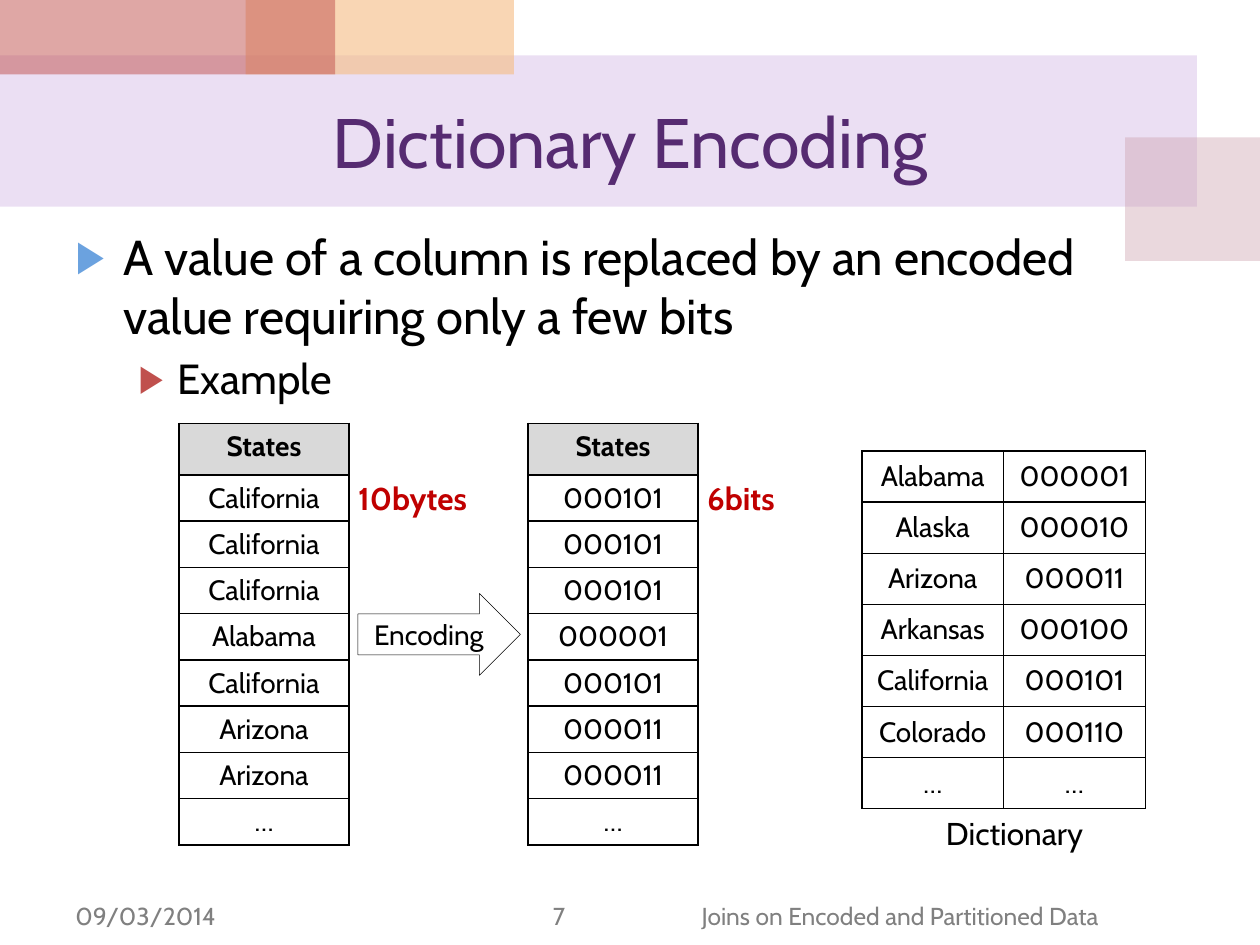
from lxml.etree import SubElement
from pptx import Presentation
from pptx.dml.color import RGBColor
from pptx.enum.shapes import MSO_SHAPE
from pptx.enum.text import MSO_ANCHOR, PP_ALIGN
from pptx.oxml.ns import qn
from pptx.util import Inches, Pt

SLIDE_WIDTH, SLIDE_HEIGHT = Inches(10), Inches(7.5)
COLUMN, ROW = SLIDE_WIDTH / 100, SLIDE_HEIGHT / 75
FONT = "Cabin"
BLACK = RGBColor(0x00, 0x00, 0x00)
GRAY = RGBColor(0x80, 0x80, 0x80)
HEADER_GRAY = RGBColor(0xD9, 0xD9, 0xD9)
PURPLE = RGBColor(0x56, 0x2B, 0x71)
LILAC = RGBColor(0xBF, 0x98, 0xD8)
ROSE = RGBColor(0xCC, 0x9E, 0xAC)
PEACH = RGBColor(0xF5, 0xBC, 0x83)
BRICK = RGBColor(0xC0, 0x50, 0x4D)
SKY = RGBColor(0x6B, 0xA2, 0xDF)
RED = RGBColor(0xC0, 0x00, 0x00)

BANDS = [
    ((0, 4.4, 95, 12), LILAC, 30),
    ((89.3, 10.9, 10.7, 9.8), ROSE, 40),
    ((19.5, 0, 21.3, 5.9), PEACH, 60),
    ((0, 0, 26.6, 5.9), BRICK, 50),
]
BULLETS = [
    ("A value of a column is replaced by an encoded value requiring only a few bits",
     28, 0, 0.38, 0.38, SKY),
    ("Example", 24, 1, 0.81, 0.31, BRICK),
]
CODES = {
    "Alabama": "000001", "Alaska": "000010", "Arizona": "000011",
    "Arkansas": "000100", "California": "000101", "Colorado": "000110", "…": "…",
}
STATES = ["California"] * 3 + ["Alabama", "California", "Arizona", "Arizona", "…"]


def grid(left, top, width, height):
    """Turn columns and rows of the slide grid into lengths."""
    return int(left * COLUMN), int(top * ROW), int(width * COLUMN), int(height * ROW)


def style(paragraph, size, color=BLACK, bold=False, align=None):
    """Format a paragraph and its runs."""
    paragraph.alignment = align
    for run in paragraph.runs:
        run.font.name = FONT
        run.font.size = Pt(size)
        run.font.bold = bold
        run.font.color.rgb = color


def add_label(slide, box, text, size, color=BLACK, bold=False):
    """Add a one-line text box and return its paragraph."""
    frame = slide.shapes.add_textbox(*grid(*box)).text_frame
    frame.word_wrap = True
    frame.text = text
    style(frame.paragraphs[0], size, color, bold)
    return frame.paragraphs[0]


def add_bands(slide):
    """Draw the translucent rectangles behind the title."""
    for box, color, opacity in BANDS:
        band = slide.shapes.add_shape(MSO_SHAPE.RECTANGLE, *grid(*box))
        band.shadow.inherit = False
        band.line.fill.background()
        band.fill.solid()
        band.fill.fore_color.rgb = color
        color_node = next(band.fill._xPr.iter(qn("a:srgbClr")))
        SubElement(color_node, qn("a:alpha"), val=str(opacity * 1000))


def add_footer(slide, box):
    """Place date, page number and talk title at tab stops."""
    paragraph = add_label(slide, box, "09/03/2014\t7\tJoins on Encoded and Partitioned Data", 14, GRAY)
    tabs = SubElement(paragraph._p.get_or_add_pPr(), qn("a:tabLst"))
    for position in (3.79, 4.97):
        SubElement(tabs, qn("a:tab"), pos=str(Inches(position)), algn="l")


def place_placeholder(slide, placeholder, box):
    """Move a placeholder to its box, in front of the bands."""
    placeholder.left, placeholder.top, placeholder.width, placeholder.height = grid(*box)
    slide.shapes._spTree.append(placeholder._element)
    return placeholder.text_frame


def fill_title(slide, box):
    """Write the slide title."""
    frame = place_placeholder(slide, slide.shapes.title, box)
    frame.text = "Dictionary Encoding"
    frame.vertical_anchor = MSO_ANCHOR.MIDDLE
    style(frame.paragraphs[0], 40, PURPLE, align=PP_ALIGN.CENTER)


def fill_body(slide, box):
    """Write the bulleted list."""
    frame = place_placeholder(slide, slide.placeholders[1], box)
    frame.text = "\n".join(bullet[0] for bullet in BULLETS)
    for paragraph, (_, size, level, indent, hang, color) in zip(frame.paragraphs, BULLETS):
        paragraph.level = level
        style(paragraph, size)
        properties = paragraph._p.get_or_add_pPr()
        properties.set("marL", str(Inches(indent)))
        properties.set("indent", str(-Inches(hang)))
        SubElement(SubElement(properties, qn("a:buClr")), qn("a:srgbClr"), val=str(color))
        SubElement(properties, qn("a:buSzPct"), val="90000")
        SubElement(properties, qn("a:buChar"), char="▶")


def add_borders(cell):
    """Draw thin black lines around a cell."""
    properties = cell._tc.get_or_add_tcPr()
    for side in ("a:lnL", "a:lnR", "a:lnT", "a:lnB"):
        line = SubElement(properties, qn(side), w=str(Pt(1)))
        SubElement(SubElement(line, qn("a:solidFill")), qn("a:srgbClr"), val=str(BLACK))


def add_grid_table(slide, box, rows, header_height=None, anchor=MSO_ANCHOR.TOP):
    """Add a bordered table, with a gray bold header if it has a header height."""
    table = slide.shapes.add_table(len(rows), len(rows[0]), *grid(*box)).table
    table.first_row = table.horz_banding = False
    if header_height:
        table.rows[0].height = int(header_height * ROW)
        for row in list(table.rows)[1:]:
            row.height = int((box[3] - header_height) / (len(rows) - 1) * ROW)
    for row_index, values in enumerate(rows):
        is_header = bool(header_height) and row_index == 0
        for column_index, value in enumerate(values):
            cell = table.cell(row_index, column_index)
            cell.text = value
            cell.vertical_anchor = anchor
            style(cell.text_frame.paragraphs[0], 16, bold=is_header, align=PP_ALIGN.CENTER)
            add_borders(cell)
            if is_header:
                cell.fill.solid()
                cell.fill.fore_color.rgb = HEADER_GRAY
            else:
                cell.fill.background()


def add_dictionary(slide, box):
    """Place the code table with its caption underneath."""
    left, top, width, height = box
    add_grid_table(slide, box, list(CODES.items()), anchor=MSO_ANCHOR.MIDDLE)
    add_label(slide, (left + 5.7, top + height - 0.1, 15.6, 4), "Dictionary", 18)


def add_encoding(slide, box):
    """Place the plain and encoded columns, their sizes and the arrow between."""
    left, top, width, height = box
    column_width = 13.5
    sides = [
        (left, STATES, "10bytes"),
        (left + width - column_width, [CODES[state] for state in STATES], "6bits"),
    ]
    for side, values, size_text in sides:
        rows = [[value] for value in ["States", *values]]
        add_grid_table(slide, (side, top, column_width, height), rows, header_height=4.1)
        add_label(slide, (side + column_width - 0.25, top + 3.9, 11, 4), size_text, 18, RED, True)
    arrow_box = grid(left + column_width + 0.7, top + 13.5, 12.9, 6.5)
    arrow = slide.shapes.add_shape(MSO_SHAPE.RIGHT_ARROW, *arrow_box)
    arrow.shadow.inherit = False
    arrow.fill.background()
    arrow.line.color.rgb = BLACK
    arrow.line.width = Pt(0.25)
    frame = arrow.text_frame
    frame.word_wrap = False
    frame.vertical_anchor = MSO_ANCHOR.MIDDLE
    frame.text = "Encoding"
    style(frame.paragraphs[0], 16, align=PP_ALIGN.CENTER)


def main():
    """Build the slide and save it."""
    presentation = Presentation()
    presentation.slide_width, presentation.slide_height = SLIDE_WIDTH, SLIDE_HEIGHT
    slide = presentation.slides.add_slide(presentation.slide_layouts[1])
    add_bands(slide)
    add_footer(slide, (5, 71, 91.8, 3.4))
    fill_title(slide, (5, 5.9, 90, 10.5))
    fill_body(slide, (5, 17.5, 90, 49.5))
    add_dictionary(slide, (68.4, 35.8, 22.5, 28.4))
    add_encoding(slide, (14.2, 33.6, 41.2, 33.4))
    presentation.save("out.pptx")


if __name__ == "__main__":
    main()
